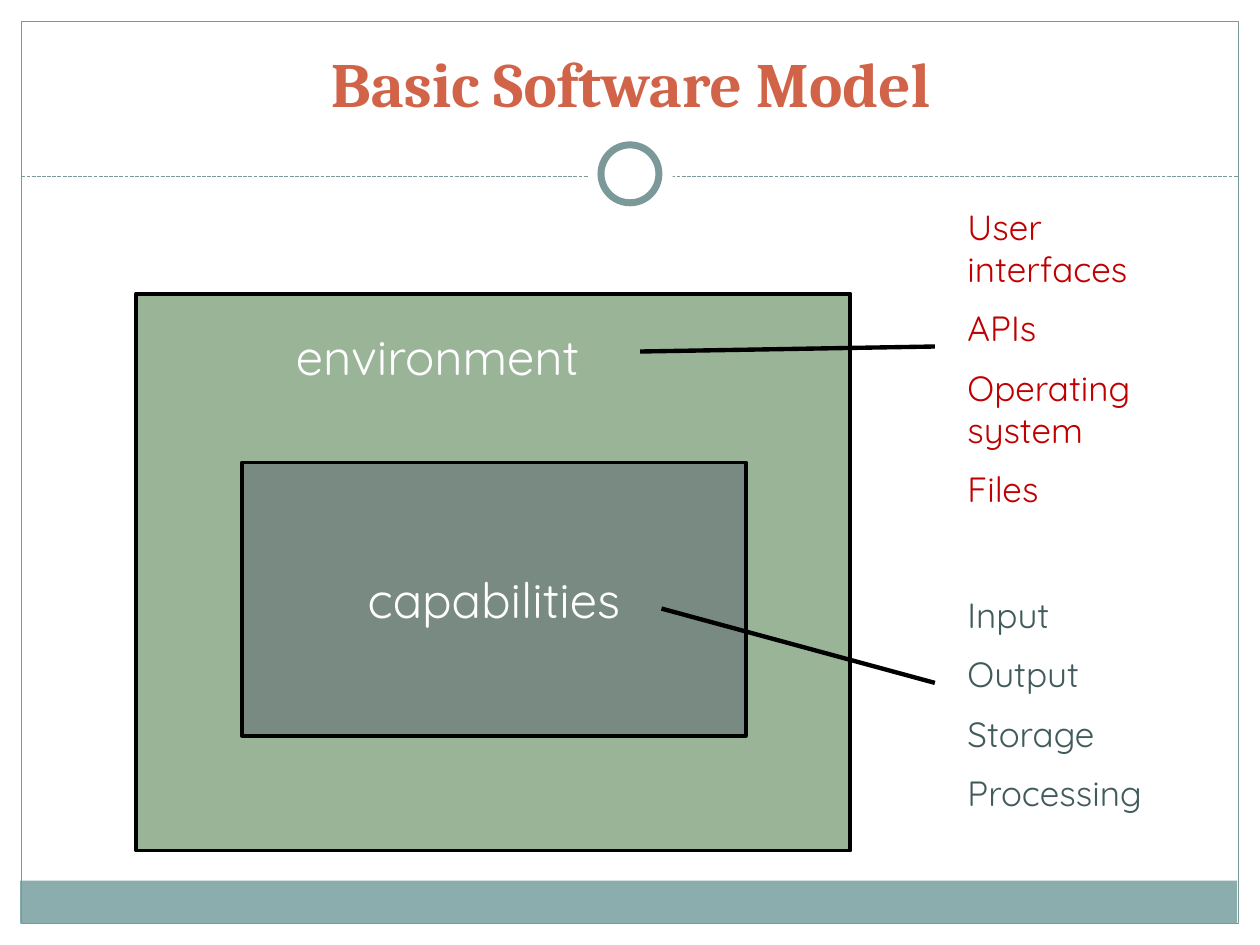
from typing import NamedTuple, Optional

from lxml.etree import SubElement
from pptx import Presentation
from pptx.dml.color import RGBColor
from pptx.enum.dml import MSO_LINE
from pptx.enum.shapes import MSO_CONNECTOR, MSO_SHAPE
from pptx.enum.text import MSO_ANCHOR, PP_ALIGN
from pptx.oxml.ns import qn
from pptx.util import Inches, Pt

COLORS = {
    "white": "FFFFFF", "black": "000000", "band": "8CADAE", "frame": "7C999A",
    "title": "D16349", "outer": "648C61", "inner": "4B5064",
    "red": "C00000", "slate": "415B5C",
}


class Box(NamedTuple):
    kind: MSO_SHAPE
    at: tuple
    fill: Optional[str] = None
    line: Optional[str] = None
    width: float = 0
    alpha: int = 100


class Label(NamedTuple):
    at: tuple
    lines: list
    size: int
    color: str
    font: str = "Quicksand"
    bold: bool = False
    wrap: bool = True
    align: PP_ALIGN = PP_ALIGN.LEFT
    anchor: MSO_ANCHOR = MSO_ANCHOR.TOP


class Rule(NamedTuple):
    start: tuple
    end: tuple
    color: str = "black"
    width: float = 2.5
    dash: Optional[MSO_LINE] = None


BACK = [
    Box(MSO_SHAPE.RECTANGLE, (0.16, 6.99, 9.66, 0.34), "band"),
    Box(MSO_SHAPE.RECTANGLE, (0.17, 0.17, 9.66, 7.16), None, "frame", 0.75),
]
DIVIDER = Rule((0.17, 1.4), (9.83, 1.4), "frame", 0.75, MSO_LINE.SQUARE_DOT)
FRONT = [
    Box(MSO_SHAPE.OVAL, (4.67, 1.05, 0.67, 0.67), "white"),
    Box(MSO_SHAPE.OVAL, (4.77, 1.15, 0.46, 0.46), "white", "frame", 4),
    Box(MSO_SHAPE.FLOWCHART_PROCESS, (1.08, 2.33, 5.67, 4.42), "outer", "black", 2.25, 65),
]
INNER = Box(MSO_SHAPE.FLOWCHART_PROCESS, (1.92, 3.67, 4, 2.17), "inner", "black", 2, 41)
INNER_TEXT = Label(INNER.at, ["capabilities"], 28, "white", wrap=False,
                   align=PP_ALIGN.CENTER, anchor=MSO_ANCHOR.MIDDLE)
LABELS = [
    Label((0.42, 0.25, 9.17, 0.75), ["Basic Software Model"], 36, "title", "Cambria",
          bold=True, align=PP_ALIGN.CENTER, anchor=MSO_ANCHOR.BOTTOM),
    Label((2.25, 2.54, 2.57, 0.57), ["environment"], 28, "white", wrap=False),
    Label((7.58, 1.58, 1.92, 2.63),
          ["User interfaces", "APIs", "Operating system", "Files"], 20, "red"),
    Label((7.58, 4.66, 2, 1.95),
          ["Input", "Output", "Storage", "Processing"], 20, "slate"),
]
LEADERS = [Rule((5.08, 2.79), (7.42, 2.75)), Rule((5.25, 4.83), (7.42, 5.42))]


def rgb(name: str) -> RGBColor:
    return RGBColor.from_string(COLORS[name])


def draw_box(shapes, box: Box):
    shape = shapes.add_shape(box.kind, *map(Inches, box.at))
    shape.shadow.inherit = False
    if box.fill:
        shape.fill.solid()
        shape.fill.fore_color.rgb = rgb(box.fill)
        if box.alpha < 100:
            color = shape.fill._xPr.find(".//" + qn("a:srgbClr"))
            SubElement(color, qn("a:alpha"), val=str(box.alpha * 1000))
    else:
        shape.fill.background()
    if box.line:
        shape.line.color.rgb = rgb(box.line)
        shape.line.width = Pt(box.width)
    else:
        shape.line.fill.background()
    return shape


def write(shape, label: Label) -> None:
    """Fill a shape with one paragraph per line, half a line apart."""
    frame = shape.text_frame
    frame.word_wrap = label.wrap
    frame.vertical_anchor = label.anchor
    frame.text = "\n".join(label.lines)
    for i, para in enumerate(frame.paragraphs):
        para.alignment = label.align
        if i:
            para.space_before = Pt(label.size / 2)
        font = para.font
        font.name, font.size, font.bold = label.font, Pt(label.size), label.bold
        font.color.rgb = rgb(label.color)


def draw_rule(shapes, rule: Rule) -> None:
    line = shapes.add_connector(MSO_CONNECTOR.STRAIGHT,
                                *map(Inches, rule.start + rule.end))
    line.line.color.rgb = rgb(rule.color)
    line.line.width = Pt(rule.width)
    if rule.dash:
        line.line.dash_style = rule.dash
    SubElement(line._element.spPr, qn("a:effectLst"))


def main() -> None:
    deck = Presentation()
    deck.slide_width, deck.slide_height = Inches(10), Inches(7.5)
    shapes = deck.slides.add_slide(deck.slide_layouts[6]).shapes
    for box in BACK:
        draw_box(shapes, box)
    draw_rule(shapes, DIVIDER)
    for box in FRONT:
        draw_box(shapes, box)
    write(draw_box(shapes, INNER), INNER_TEXT)
    for label in LABELS:
        write(shapes.add_textbox(*map(Inches, label.at)), label)
    for rule in LEADERS:
        draw_rule(shapes, rule)
    deck.save("out.pptx")


if __name__ == "__main__":
    main()
